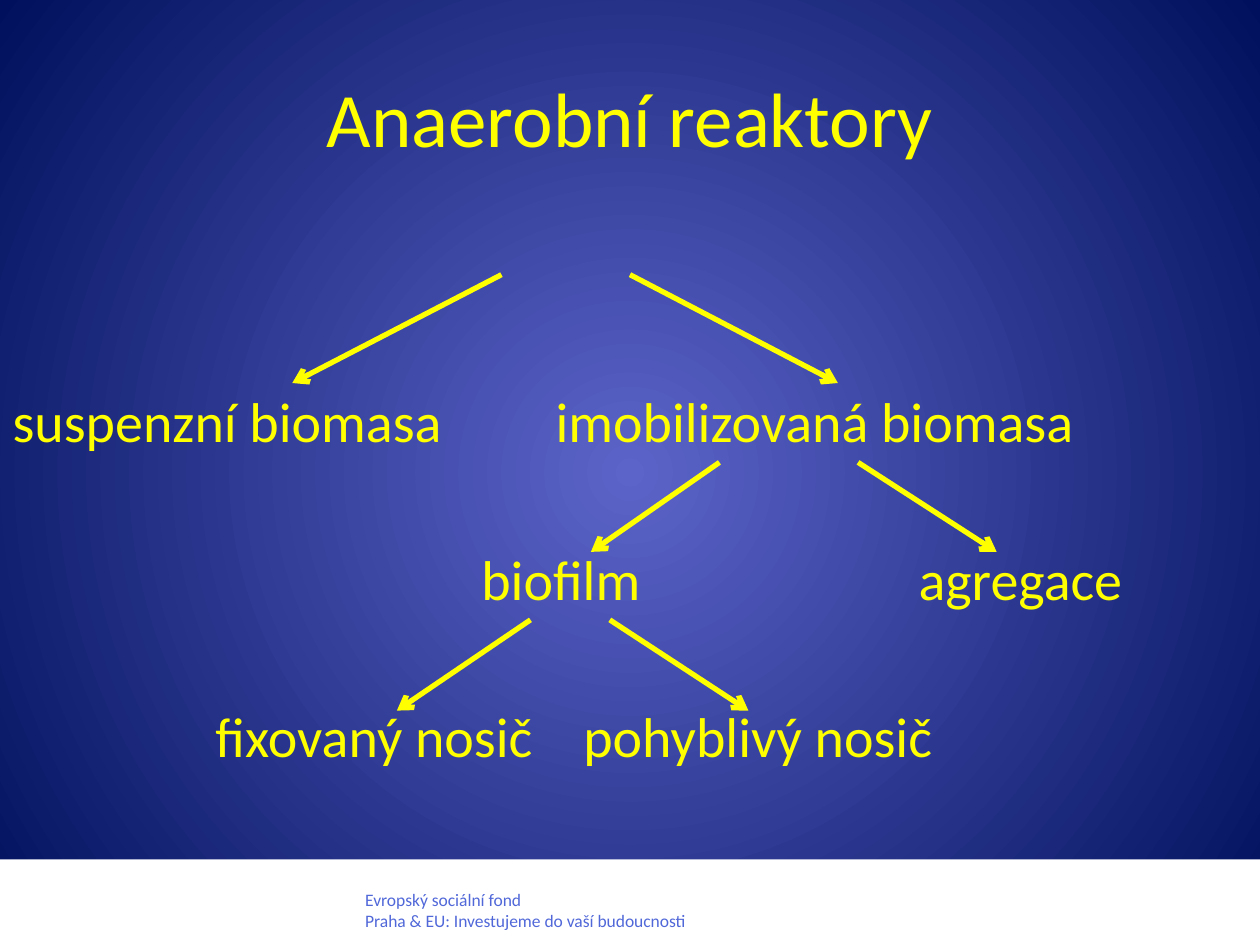
from lxml import etree
from pptx import Presentation
from pptx.dml.color import RGBColor
from pptx.enum.shapes import MSO_CONNECTOR, MSO_SHAPE
from pptx.enum.text import MSO_ANCHOR, PP_ALIGN
from pptx.oxml import parse_xml
from pptx.oxml.ns import nsdecls, qn
from pptx.util import Inches, Pt

STRAIGHT = MSO_CONNECTOR.STRAIGHT
RECTANGLE = MSO_SHAPE.RECTANGLE
MIDDLE = MSO_ANCHOR.MIDDLE
TOP = MSO_ANCHOR.TOP
LEFT = PP_ALIGN.LEFT
CENTER = PP_ALIGN.CENTER

YELLOW = RGBColor(0xFF, 0xFF, 0x00)
WHITE = RGBColor(0xFF, 0xFF, 0xFF)
FOOTER_BLUE = RGBColor(0x51, 0x68, 0xD9)
GLOW_BLUE = RGBColor(0x5C, 0x64, 0xC9)
NIGHT_BLUE = RGBColor(0x00, 0x10, 0x5C)

FONT = "Calibri"
TITLE_ONLY = 5
LEVEL_PITCH = 1.25
LABEL_HEIGHT = 0.55

# (level, left, width, text), relative to the tree's box
LABELS = [
    (0, 0.1, 3.5, "suspenzní biomasa"),
    (0, 4.41, 4.2, "imobilizovaná biomasa"),
    (1, 3.82, 1.35, "biofilm"),
    (1, 7.29, 1.72, "agregace"),
    (2, 1.71, 2.62, "fixovaný nosič"),
    (2, 4.63, 2.87, "pohyblivý nosič"),
]

# (start y, end y, ((start x, end x), ...)), relative to the tree's box
BRANCHES = [
    (0.43, 1.29, ((3.98, 2.32), (5, 6.65))),
    (1.92, 2.63, ((5.71, 4.69), (6.81, 7.91))),
    (3.17, 3.89, ((4.21, 3.15), (4.84, 5.94))),
]


def write_text(shape, text, size, color=YELLOW, align=LEFT, anchor=TOP, inset=0):
    frame = shape.text_frame
    frame.word_wrap = True
    frame.vertical_anchor = anchor
    frame.margin_left = frame.margin_right = Inches(inset)
    frame.margin_top = frame.margin_bottom = Inches(inset / 2)
    paragraph = frame.paragraphs[0]
    paragraph.text = text
    paragraph.alignment = align
    paragraph.font.name = FONT
    paragraph.font.size = Pt(size)
    paragraph.font.color.rgb = color


def paint_background(slide):
    """Radial gradient from a light centre to dark corners."""
    fill = slide.background.fill
    fill.gradient()
    for stop, position, color in zip(fill.gradient_stops, (0, 1), (GLOW_BLUE, NIGHT_BLUE)):
        stop.position = position
        stop.color.rgb = color
    gradient = slide.element.find(".//" + qn("a:gradFill"))
    radial = parse_xml(
        f'<a:path {nsdecls("a")} path="circle">'
        '<a:fillToRect l="50000" t="50000" r="50000" b="50000"/></a:path>'
    )
    gradient.replace(gradient.find(qn("a:lin")), radial)


def add_footer(slide, left, top, width, height):
    band = slide.shapes.add_shape(
        RECTANGLE, Inches(left), Inches(top), Inches(width), Inches(height)
    )
    band.shadow.inherit = False
    band.fill.solid()
    band.fill.fore_color.rgb = WHITE
    band.line.fill.background()
    caption = slide.shapes.add_textbox(
        Inches(left + 2.8), Inches(top + 0.19), Inches(3.78), Inches(0.44)
    )
    write_text(
        caption,
        "Evropský sociální fond\nPraha & EU: Investujeme do vaší budoucnosti",
        size=10, color=FOOTER_BLUE, inset=0.1,
    )


def place_title(slide, left, top, width, height):
    title = slide.shapes.title
    title.left, title.top = Inches(left), Inches(top)
    title.width, title.height = Inches(width), Inches(height)
    write_text(title, "Anaerobní reaktory", size=44, align=CENTER, anchor=MIDDLE, inset=0.1)


def add_arrow(slide, start_x, start_y, end_x, end_y):
    arrow = slide.shapes.add_connector(
        STRAIGHT, Inches(start_x), Inches(start_y), Inches(end_x), Inches(end_y)
    )
    arrow.line.color.rgb = YELLOW
    arrow.line.width = Pt(3)
    properties = arrow.element.spPr
    line = properties.find(qn("a:ln"))
    etree.SubElement(line, qn("a:tailEnd"), type="arrow")
    etree.SubElement(properties, qn("a:effectLst"))


def add_tree(slide, left, top):
    for level, label_left, width, text in LABELS:
        label = slide.shapes.add_textbox(
            Inches(left + label_left), Inches(top + 1.32 + level * LEVEL_PITCH),
            Inches(width), Inches(LABEL_HEIGHT),
        )
        write_text(label, text, size=32)
    for start_y, end_y, pair in BRANCHES:
        for start_x, end_x in pair:
            add_arrow(slide, left + start_x, top + start_y, left + end_x, top + end_y)


def main():
    presentation = Presentation()
    presentation.slide_width = Inches(10)
    presentation.slide_height = Inches(7.5)
    slide = presentation.slides.add_slide(presentation.slide_layouts[TITLE_ONLY])
    paint_background(slide)
    add_footer(slide, 0, 6.82, 10, 0.68)
    place_title(slide, 0.5, 0.3, 9, 1.25)
    add_tree(slide, 0, 1.75)
    presentation.save("out.pptx")


if __name__ == "__main__":
    main()
